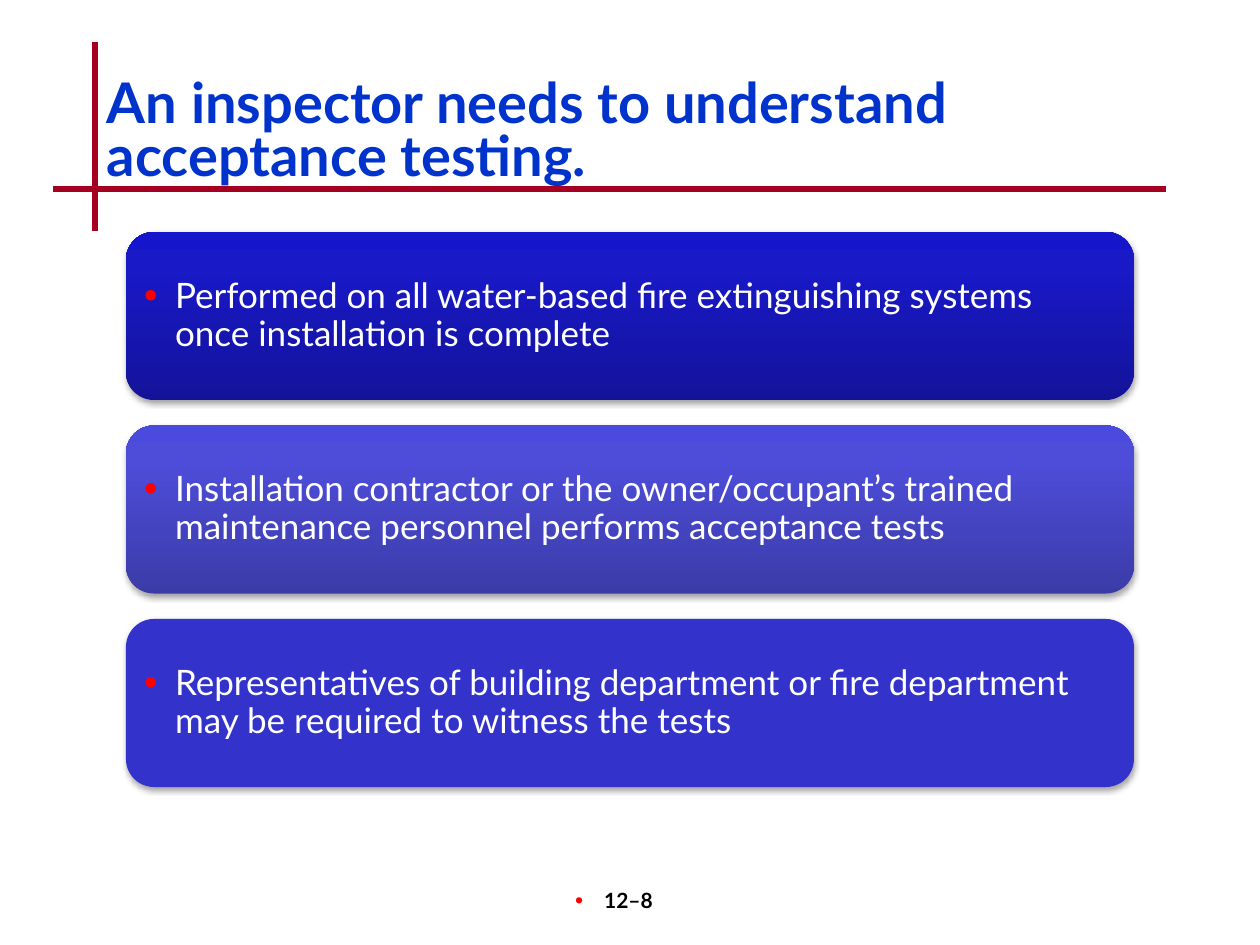
from lxml.etree import SubElement
from pptx import Presentation
from pptx.dml.color import RGBColor
from pptx.enum.shapes import MSO_CONNECTOR, MSO_SHAPE
from pptx.enum.text import MSO_ANCHOR, PP_ALIGN
from pptx.oxml import parse_xml
from pptx.oxml.ns import nsdecls, qn
from pptx.util import Pt

EMU_PER_PX = 914400 / 126
FONT = "Lato"
COLORS = {
    "rule": "A50021", "title": "0033CC", "bullet": "FF0000",
    "card_text": "FFFFFF", "footer": "000000", "shadow": "000000",
}
# Each card: text, then its colours from bottom to top
CARDS = [
    ("Performed on all water-based fire extinguishing systems once installation is complete",
     ["13139A", "1919C8", "1515CC"]),
    ("Installation contractor or the owner/occupant’s trained maintenance personnel "
     "performs acceptance tests",
     ["3B3BA8", "4D4DDA", "4A4ADE"]),
    ("Representatives of building department or fire department may be required to "
     "witness the tests",
     ["3333CC"]),
]
GRADIENT_STOPS = [0, 80, 100]


def px(length):
    return round(length * EMU_PER_PX)


def add_rule(page, start, end):
    rule = page.shapes.add_connector(
        MSO_CONNECTOR.STRAIGHT, *(px(value) for value in start + end))
    rule.line.color.rgb = RGBColor.from_string(COLORS["rule"])
    rule.line.width = Pt(3)
    SubElement(rule._element.spPr, qn("a:effectLst"))


def add_bullet(para, hang):
    properties = para._p.get_or_add_pPr()
    properties.set("marL", str(px(hang)))
    properties.set("indent", str(-px(hang)))
    color = SubElement(properties, qn("a:buClr"))
    SubElement(color, qn("a:srgbClr"), val=COLORS["bullet"])
    SubElement(properties, qn("a:buSzPct"), val="110000")
    SubElement(properties, qn("a:buFont"), typeface="Arial")
    SubElement(properties, qn("a:buChar"), char="•")


def add_text(page, box, text, size, color, insets, bold=False,
             anchor=MSO_ANCHOR.MIDDLE, line_spacing=1.0, hang=0):
    frame = page.shapes.add_textbox(*(px(value) for value in box)).text_frame
    frame.word_wrap = True
    frame.vertical_anchor = anchor
    (frame.margin_left, frame.margin_top,
     frame.margin_right, frame.margin_bottom) = (px(value) for value in insets)
    frame.text = text
    para = frame.paragraphs[0]
    para.line_spacing = line_spacing
    if hang:
        add_bullet(para, hang)
    font = para.runs[0].font
    font.name, font.size, font.bold = FONT, Pt(size), bold
    font.color.rgb = RGBColor.from_string(color)
    return para


def fill_card(card, colors):
    if len(colors) == 1:
        card.fill.solid()
        card.fill.fore_color.rgb = RGBColor.from_string(colors[0])
        return
    stops = "".join(
        f'<a:gs pos="{stop * 1000}"><a:srgbClr val="{color}"/></a:gs>'
        for stop, color in zip(GRADIENT_STOPS, colors))
    gradient = parse_xml(
        f'<a:gradFill {nsdecls("a")} rotWithShape="1"><a:gsLst>{stops}</a:gsLst>'
        '<a:lin ang="16200000" scaled="0"/></a:gradFill>')
    card.fill.background()
    properties = card._element.spPr
    properties.replace(properties.find(qn("a:noFill")), gradient)


def add_shadow(card):
    card.shadow.inherit = False
    effects = card._element.spPr.find(qn("a:effectLst"))
    shadow = SubElement(effects, qn("a:outerShdw"), blurRad=str(Pt(3.1)),
                        dist=str(Pt(1.8)), dir="5400000", rotWithShape="0")
    color = SubElement(shadow, qn("a:srgbClr"), val=COLORS["shadow"])
    SubElement(color, qn("a:alpha"), val="35000")


def add_card(page, box, text, colors):
    left, top, width, height = box
    card = page.shapes.add_shape(
        MSO_SHAPE.ROUNDED_RECTANGLE, *(px(value) for value in box))
    fill_card(card, colors)
    card.line.fill.background()
    add_shadow(card)
    pad = 8
    add_text(page, (left + pad, top + pad, width - 2 * pad, height - 2 * pad),
             text, 20, COLORS["card_text"], (10, 10, 10, 10),
             line_spacing=0.9, hang=31)


def add_header(page, box):
    left, top, width, height = box
    # Crossed rules
    add_rule(page, (left + 42, top), (left + 42, top + height))
    add_rule(page, (left, top + 147), (left + width, top + 147))
    # Title
    add_text(page, (left + 42, top + 29, 1071, 126),
             "An inspector needs to understand acceptance testing.",
             32, COLORS["title"], (12, 6, 12, 6), bold=True, line_spacing=0.8)


def add_card_stack(page, box):
    left, top, width, height = box
    card_height = 168
    step = (height - card_height) / (len(CARDS) - 1)
    for index, (text, colors) in enumerate(CARDS):
        add_card(page, (left, top + index * step, width, card_height), text, colors)


def add_footer(page, box):
    para = add_text(page, box, "12–8", 12, COLORS["footer"], (12, 6, 34, 6),
                    bold=True, anchor=MSO_ANCHOR.TOP, hang=29)
    para.alignment = PP_ALIGN.CENTER


def main():
    deck = Presentation()
    deck.slide_width, deck.slide_height = px(1260), px(945)
    page = deck.slides.add_slide(deck.slide_layouts[6])
    add_header(page, (53, 42, 1113, 189))
    add_card_stack(page, (126, 232, 1008, 555))
    add_footer(page, (494, 882, 262, 63))
    deck.save("out.pptx")


if __name__ == "__main__":
    main()
